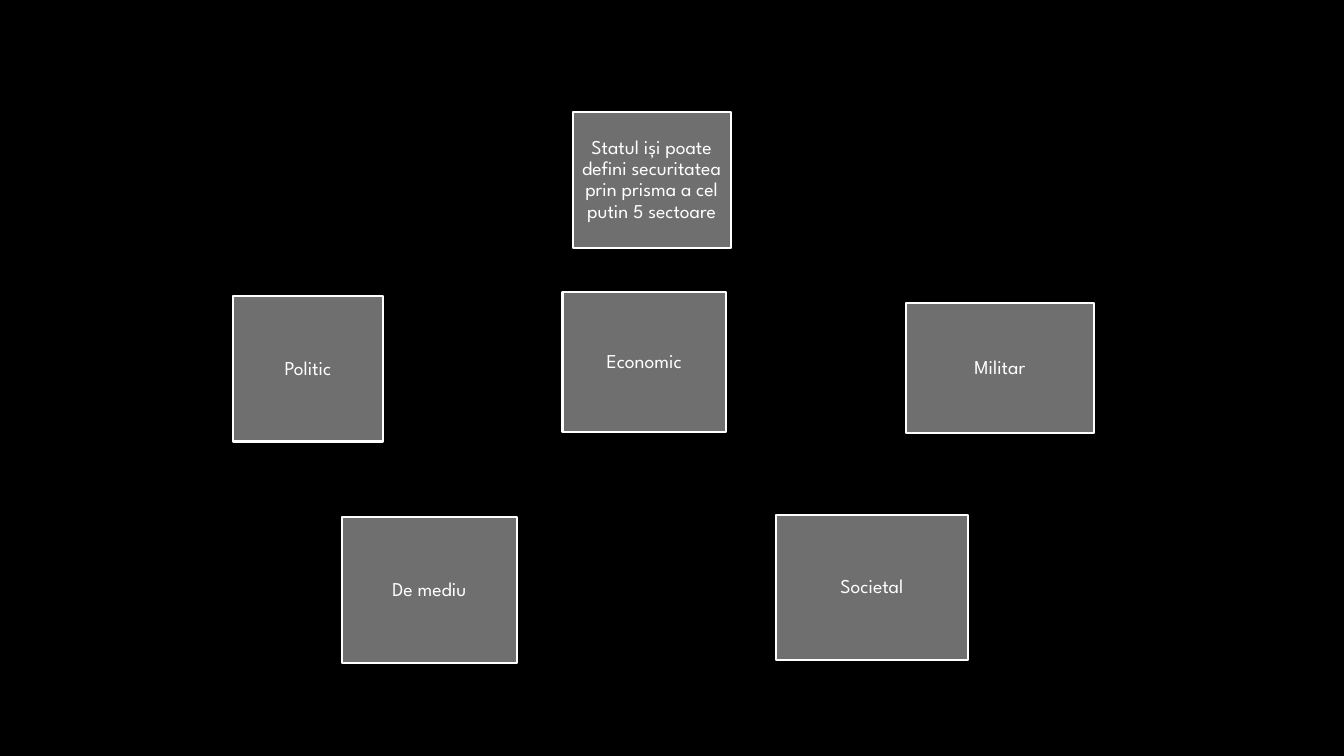
"""Build a slide on the five sectors through which a state defines its security."""
from dataclasses import dataclass

from pptx import Presentation
from pptx.dml.color import RGBColor
from pptx.enum.shapes import MSO_SHAPE
from pptx.enum.text import MSO_ANCHOR, MSO_AUTO_SIZE, PP_ALIGN
from pptx.shapes.autoshape import Shape
from pptx.slide import Slide
from pptx.util import Pt

BLACK = RGBColor(0x00, 0x00, 0x00)
GREY = RGBColor(0x6F, 0x6F, 0x6F)
WHITE = RGBColor(0xFF, 0xFF, 0xFF)
FONT = "League Spartan"


@dataclass(frozen=True)
class Card:
    text: str
    left: float
    top: float
    width: float
    height: float


HEADING = Card("Statul iși poate defini securitatea prin prisma a cel putin 5 sectoare",
               409, 79.9, 113, 97.2)
SECTORS = [
    Card("Militar", 647.3, 216.7, 133.9, 92.9),
    Card("Politic", 166.3, 211.7, 107.3, 103.7),
    Card("Economic", 401.8, 208.8, 116.6, 100.1),
    Card("De mediu", 244.1, 369.4, 125.3, 104.4),
    Card("Societal", 554.4, 367.9, 136.8, 103.7),
]


def write_text(box: Shape, text: str, *, font: str = FONT, size: float = 14,
               color: RGBColor = WHITE, inset: float = 0.7) -> None:
    frame = box.text_frame
    frame.word_wrap = True
    frame.auto_size = MSO_AUTO_SIZE.NONE
    frame.vertical_anchor = MSO_ANCHOR.MIDDLE
    frame.margin_left = frame.margin_right = Pt(inset)
    frame.margin_top = frame.margin_bottom = Pt(inset)
    para = frame.paragraphs[0]
    para.alignment = PP_ALIGN.CENTER
    para.line_spacing = 0.9
    para.space_before = Pt(0)
    para.space_after = Pt(size * 0.35)
    span = para.add_run()
    span.text = text
    span.font.name = font
    span.font.size = Pt(size)
    span.font.color.rgb = color


def format_card(box: Shape, card: Card) -> None:
    box.left, box.top = Pt(card.left), Pt(card.top)
    box.width, box.height = Pt(card.width), Pt(card.height)
    box.shadow.inherit = False
    box.fill.solid()
    box.fill.fore_color.rgb = GREY
    box.line.color.rgb = WHITE
    box.line.width = Pt(1.5)
    write_text(box, card.text)


def add_sector(page: Slide, card: Card) -> None:
    box = page.shapes.add_shape(MSO_SHAPE.RECTANGLE, Pt(card.left), Pt(card.top),
                                Pt(card.width), Pt(card.height))
    format_card(box, card)


def main() -> None:
    deck = Presentation()
    deck.slide_width, deck.slide_height = Pt(960), Pt(540)
    page = deck.slides.add_slide(deck.slide_layouts.get_by_name("Title Only"))
    page.background.fill.solid()
    page.background.fill.fore_color.rgb = BLACK
    format_card(page.shapes.title, HEADING)
    for sector in SECTORS:
        add_sector(page, sector)
    deck.save("out.pptx")


if __name__ == "__main__":
    main()
